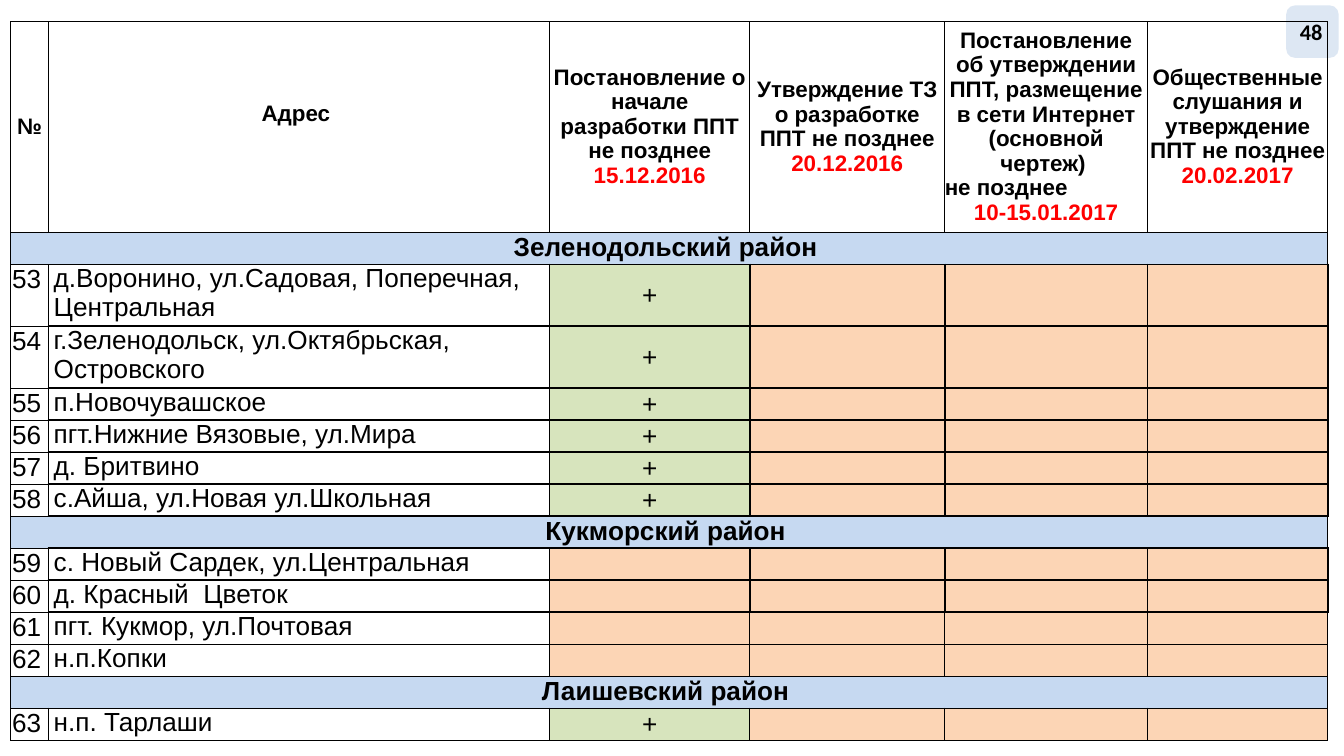
from lxml.etree import SubElement
from pptx import Presentation
from pptx.dml.color import RGBColor
from pptx.enum.shapes import MSO_SHAPE
from pptx.enum.text import MSO_ANCHOR, PP_ALIGN
from pptx.oxml.ns import qn
from pptx.util import Inches, Pt

SLIDE_WIDTH = Inches(10)
SLIDE_HEIGHT = SLIDE_WIDTH * 9 // 16
BLACK, WHITE, RED = "000000", "FFFFFF", "FF0000"
BLUE, GREEN, ORANGE, BADGE_BLUE = "C6D9F1", "D7E4BD", "FCD5B5", "DDE7F3"
COLUMN_WEIGHTS = [0.28, 3.73, 1.49, 1.45, 1.51, 1.34]
HEADER_HEIGHT, TALL_ROW_HEIGHT = Inches(1.57), Inches(0.46)
TALL_NUMBERS = (53, 54)
THICK_BORDER_NUMBERS = range(53, 61)
HEADERS = [
    [[("№", BLACK)]],
    [[("Адрес ", BLACK)]],
    [[("Постановление о начале разработки ППТ не позднее ", BLACK), ("15.12.2016", RED)]],
    [[("Утверждение ТЗ о разработке ППТ не позднее ", BLACK), ("20.12.2016", RED)]],
    [
        [("Постановление об утверждении ППТ, размещение в сети Интернет (основной чертеж) ", BLACK)],
        [("не позднее", BLACK)],
        [("10-15.01.2017", RED)],
    ],
    [[("Общественные слушания и утверждение ППТ не позднее ", BLACK), ("20.02.2017", RED)]],
]
DISTRICTS = [
    ("Зеленодольский район ", "+", [
        "д.Воронино, ул.Садовая, Поперечная, Центральная",
        "г.Зеленодольск, ул.Октябрьская, Островского",
        "п.Новочувашское",
        "пгт.Нижние Вязовые, ул.Мира",
        "д. Бритвино",
        "с.Айша, ул.Новая ул.Школьная",
    ]),
    ("Кукморский район ", "", [
        "с. Новый Сардек, ул.Центральная",
        "д. Красный  Цветок",
        "пгт. Кукмор, ул.Почтовая",
        "н.п.Копки",
    ]),
    ("Лаишевский район ", "+", ["н.п. Тарлаши"]),
]
FIRST_NUMBER = 53


def color(value):
    return RGBColor.from_string(value)


def set_borders(cell, points):
    properties = cell._tc.get_or_add_tcPr()
    for position, side in enumerate(("lnL", "lnR", "lnT", "lnB")):
        line = properties.makeelement(qn(f"a:{side}"), {"w": str(Pt(points))})
        fill = SubElement(line, qn("a:solidFill"))
        SubElement(fill, qn("a:srgbClr"), val=BLACK)
        properties.insert(position, line)


def set_margins(cell, left, top, right, bottom):
    cell.margin_left, cell.margin_top = Inches(left), Inches(top)
    cell.margin_right, cell.margin_bottom = Inches(right), Inches(bottom)


def format_paragraph(paragraph, size, bold=False, align=PP_ALIGN.LEFT, name="Arial"):
    paragraph.alignment = align
    paragraph.font.size = Pt(size)
    paragraph.font.bold = bold
    paragraph.font.name = name


def fill_cell(cell, text, fill, border=0.5, bold=False, align=PP_ALIGN.LEFT,
              anchor=MSO_ANCHOR.TOP, left=0.01, top=0.01):
    cell.fill.solid()
    cell.fill.fore_color.rgb = color(fill)
    set_borders(cell, border)
    set_margins(cell, left, top, 0.01, 0)
    cell.vertical_anchor = anchor
    paragraph = cell.text_frame.paragraphs[0]
    paragraph.line_spacing = 0.98
    format_paragraph(paragraph, 14, bold, align)
    paragraph.font.color.rgb = color(BLACK)
    if text:
        paragraph.add_run().text = text
    else:
        SubElement(paragraph._p, qn("a:endParaRPr"), sz="1400")


def fill_header(cell, paragraphs, bottom):
    cell.fill.background()
    set_borders(cell, 0.5)
    set_margins(cell, 0, 0, 0, bottom)
    cell.vertical_anchor = MSO_ANCHOR.MIDDLE
    frame = cell.text_frame
    for index, runs in enumerate(paragraphs):
        paragraph = frame.add_paragraph() if index else frame.paragraphs[0]
        paragraph.line_spacing = 0.98
        align = PP_ALIGN.LEFT if index == 1 else PP_ALIGN.CENTER
        format_paragraph(paragraph, 12, True, align)
        for text, run_color in runs:
            run = paragraph.add_run()
            run.text = text
            run.font.color.rgb = color(run_color)


def fill_district(cells, name):
    cells[0].merge(cells[-1])
    for cell in cells[1:]:
        set_borders(cell, 0.5)
    fill_cell(cells[0], name, BLUE, bold=True, align=PP_ALIGN.CENTER)


def fill_address(cells, number, address, mark):
    border = 1 if number in THICK_BORDER_NUMBERS else 0.5
    fill_cell(cells[0], str(number), WHITE)
    fill_cell(cells[1], address, WHITE, border, left=0.04, top=0)
    fill_cell(cells[2], mark, GREEN if mark else ORANGE, border,
              align=PP_ALIGN.CENTER, anchor=MSO_ANCHOR.MIDDLE)
    for cell in cells[3:]:
        fill_cell(cell, "", ORANGE, border)


def add_schedule(slide, left, top, width, height):
    row_count = 1 + sum(1 + len(addresses) for _, _, addresses in DISTRICTS)
    table = slide.shapes.add_table(
        row_count, len(COLUMN_WEIGHTS), left, top, width, height).table
    table.first_row = table.horz_banding = False
    for column, weight in zip(table.columns, COLUMN_WEIGHTS):
        column.width = int(width * weight / sum(COLUMN_WEIGHTS))
    tall_count = len(TALL_NUMBERS)
    plain_height = height - HEADER_HEIGHT - tall_count * TALL_ROW_HEIGHT
    for row in table.rows:
        row.height = plain_height // (row_count - 1 - tall_count)
    rows = iter(table.rows)
    header = next(rows)
    header.height = HEADER_HEIGHT
    for index, (cell, paragraphs) in enumerate(zip(header.cells, HEADERS)):
        fill_header(cell, paragraphs, bottom=0.19 if index == 1 else 0)
    number = FIRST_NUMBER
    for name, mark, addresses in DISTRICTS:
        fill_district(list(next(rows).cells), name)
        for address in addresses:
            row = next(rows)
            if number in TALL_NUMBERS:
                row.height = TALL_ROW_HEIGHT
            fill_address(list(row.cells), number, address, mark)
            number += 1


def add_page_badge(slide, left, top, width, height):
    badge = slide.shapes.add_shape(MSO_SHAPE.ROUNDED_RECTANGLE, left, top, width, height)
    badge.shadow.inherit = False
    badge.fill.solid()
    badge.fill.fore_color.rgb = color(BADGE_BLUE)
    badge.line.fill.background()
    frame = badge.text_frame
    frame.margin_left, frame.margin_right = Inches(0.08), Inches(0.1)
    frame.word_wrap = False
    frame.vertical_anchor = MSO_ANCHOR.MIDDLE
    paragraph = frame.paragraphs[0]
    format_paragraph(paragraph, 12, True, PP_ALIGN.CENTER, "Calibri")
    paragraph.font.color.rgb = color(BLACK)
    paragraph.add_run().text = "48"


def main():
    presentation = Presentation()
    presentation.slide_width, presentation.slide_height = SLIDE_WIDTH, SLIDE_HEIGHT
    slide = presentation.slides.add_slide(presentation.slide_layouts[6])
    add_page_badge(slide, Inches(9.57), Inches(0.04), Inches(0.39), Inches(0.39))
    add_schedule(slide, Inches(0.08), Inches(0.16), Inches(9.8), Inches(5.35))
    presentation.save("out.pptx")


if __name__ == "__main__":
    main()
